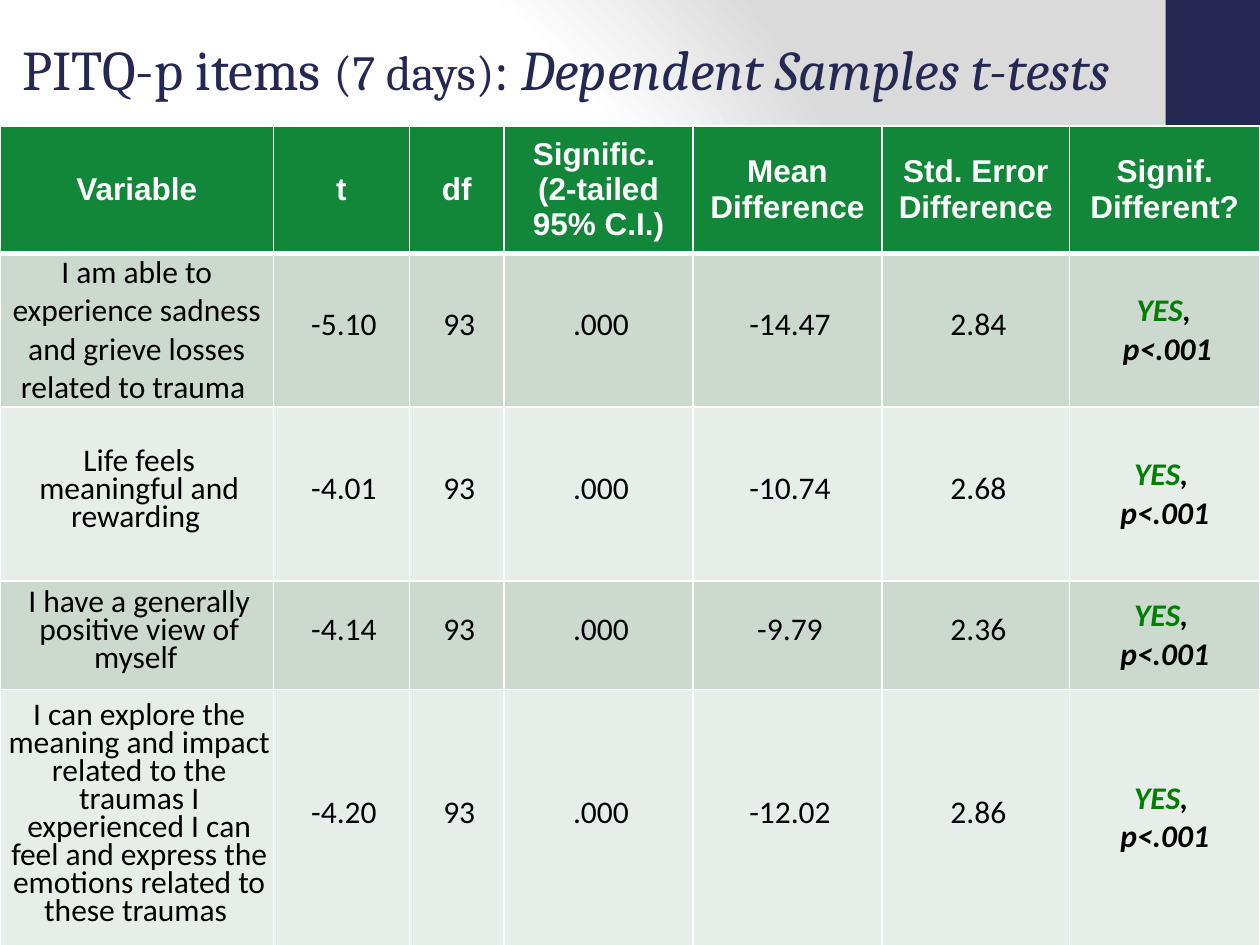
from lxml import etree
from pptx import Presentation
from pptx.dml.color import RGBColor
from pptx.enum.shapes import MSO_SHAPE
from pptx.enum.text import MSO_ANCHOR, MSO_AUTO_SIZE, PP_ALIGN
from pptx.oxml import parse_xml
from pptx.oxml.ns import nsdecls, qn
from pptx.util import Inches, Pt

RECTANGLE = MSO_SHAPE.RECTANGLE
MIDDLE = MSO_ANCHOR.MIDDLE
NO_AUTOFIT = MSO_AUTO_SIZE.NONE
LEFT, CENTER = PP_ALIGN.LEFT, PP_ALIGN.CENTER

NAVY = RGBColor(0x24, 0x28, 0x52)
GREEN = RGBColor(0x12, 0x87, 0x3A)
YES_GREEN = RGBColor(0x00, 0x80, 0x00)
DARK_BAND = RGBColor(0xCC, 0xD9, 0xCE)
LIGHT_BAND = RGBColor(0xE7, 0xED, 0xE8)
WHITE = RGBColor(0xFF, 0xFF, 0xFF)
GRAY = RGBColor(0xDA, 0xDA, 0xDA)
BLACK = RGBColor(0x00, 0x00, 0x00)
INK = RGBColor(0x01, 0x02, 0x05)

COLUMN_WIDTHS = [2.17, 1.08, 0.75, 1.5, 1.5, 1.49, 1.51]
ROW_HEIGHTS = [1.01, 1.22, 1.38, 0.86, 2.04]
HEADERS = ["Variable", "t", "df", "Signific. \n(2-tailed\n95% C.I.)",
           "Mean Difference", "Std. Error Difference", "Signif. Different?"]
ITEMS = [
    ["I am able to experience sadness and grieve losses related to trauma ",
     "-5.10", "93", ".000", "-14.47", "2.84"],
    ["Life feels meaningful and rewarding ",
     "-4.01", "93", ".000", "-10.74", "2.68"],
    ["I have a generally positive view of myself ",
     "-4.14", "93", ".000", "-9.79", "2.36"],
    ["I can explore the meaning and impact related to the traumas I experienced "
     "I can feel and express the emotions related to these traumas ",
     "-4.20", "93", ".000", "-12.02", "2.86"],
]
PADDED_ITEMS = (2, 3)  # rows whose item text keeps the default cell margins


def add_text(para, text, font="Calibri", size=18, color=BLACK, bold=False, italic=False):
    """Add formatted text to a paragraph; each newline becomes a line break."""
    for number, line in enumerate(text.split("\n")):
        if number:
            para.add_line_break()
        span = para.add_run()
        span.text = line
        span.font.name = font
        span.font.size = Pt(size)
        span.font.color.rgb = color
        span.font.bold = bold
        span.font.italic = italic


class SlideBuilder:
    def __init__(self, deck):
        self.slide = deck.slides.add_slide(deck.slide_layouts[5])

    def background(self, stops):
        fill = self.slide.background.fill
        fill.gradient()
        stop_xml = "".join(
            f'<a:gs pos="{place * 1000}"><a:srgbClr val="{color}"/></a:gs>'
            for place, color in stops)
        gradient = parse_xml(
            f'<a:gradFill {nsdecls("a")} rotWithShape="1"><a:gsLst>{stop_xml}</a:gsLst>'
            '<a:path path="circle"><a:fillToRect l="20000" t="50000" r="100000" b="50000"/>'
            '</a:path></a:gradFill>')
        current = next(self.slide.element.iter(qn("a:gradFill")))
        current.getparent().replace(current, gradient)

    def bar(self, left, top, width, height, color):
        box = self.slide.shapes.add_shape(
            RECTANGLE, Inches(left), Inches(top), Inches(width), Inches(height))
        box.shadow.inherit = False
        box.fill.solid()
        box.fill.fore_color.rgb = color
        box.line.fill.background()

    def table(self, left, top, widths, heights):
        frame = self.slide.shapes.add_table(
            len(heights), len(widths), Inches(left), Inches(top),
            Inches(sum(widths)), Inches(sum(heights)))
        table = frame.table
        for column, width in zip(table.columns, widths):
            column.width = Inches(width)
        for row, height in zip(table.rows, heights):
            row.height = Inches(height)
        return table

    def borders(self, cell, widths):
        properties = cell._tc.get_or_add_tcPr()
        for side, width in widths.items():
            line = etree.SubElement(properties, qn(f"a:ln{side}"), w=str(Pt(width)))
            solid = etree.SubElement(line, qn("a:solidFill"))
            etree.SubElement(solid, qn("a:srgbClr"), val=str(WHITE))

    def cell(self, cell, spans, fill, bottom=1, padded=True, indent=0, spacing=None):
        self.borders(cell, {"L": 1, "R": 1, "T": 1, "B": bottom})
        cell.fill.solid()
        cell.fill.fore_color.rgb = fill
        cell.vertical_anchor = MIDDLE
        if not padded:
            cell.margin_left = cell.margin_right = 0
            cell.margin_top = cell.margin_bottom = 0
        para = cell.text_frame.paragraphs[0]
        para.alignment = CENTER
        if indent:
            para._p.get_or_add_pPr().set("marL", str(Inches(indent)))
        if spacing:
            para.line_spacing = Pt(spacing)
        for text, style in spans:
            add_text(para, text, **style)

    def title(self, left, top, width, height, spans):
        box = self.slide.shapes.title
        box.left, box.top = Inches(left), Inches(top)
        box.width, box.height = Inches(width), Inches(height)
        frame = box.text_frame
        frame.word_wrap = True
        frame.auto_size = NO_AUTOFIT
        frame.vertical_anchor = MIDDLE
        para = frame.paragraphs[0]
        para.alignment = LEFT
        for text, style in spans:
            add_text(para, text, font="Cambria", color=NAVY, **style)
        # Bring the title in front of the bar and table
        box.element.getparent().append(box.element)


def main():
    deck = Presentation()
    deck.slide_width, deck.slide_height = Inches(10), Inches(7.5)
    builder = SlideBuilder(deck)

    # Backdrop
    builder.background([(0, WHITE), (75, WHITE), (100, GRAY)])
    builder.bar(9.25, 0, 0.75, 7.5, NAVY)

    # Table header
    table = builder.table(0, 1, COLUMN_WIDTHS, ROW_HEIGHTS)
    header_style = {"font": "Arial", "color": WHITE, "bold": True}
    for column, text in enumerate(HEADERS):
        builder.cell(table.cell(0, column), [(text, header_style)], GREEN, bottom=3)

    # Test results, ending with the verdict column
    emphasis = {"bold": True, "italic": True}
    verdict = [("YES", {"color": YES_GREEN, **emphasis}), (", \np<.001", emphasis)]
    for row, values in enumerate(ITEMS, start=1):
        band = DARK_BAND if row % 2 else LIGHT_BAND
        for column, text in enumerate(values):
            is_item = column == 0
            natural = is_item and row == 1
            builder.cell(
                table.cell(row, column), [(text, {"color": BLACK if is_item else INK})], band,
                padded=is_item and row in PADDED_ITEMS,
                indent=0 if natural else 0.04, spacing=None if natural else 16)
        builder.cell(table.cell(row, len(values)), verdict, band,
                     indent=0.04 if row == 1 else 0)

    # Title
    builder.title(0.08, 0.08, 9.75, 0.92, [
        ("PITQ-p items ", {"size": 32}),
        ("(7 days)", {"size": 28}),
        (": ", {"size": 32}),
        ("Dependent Samples t-tests", {"size": 32, "italic": True}),
    ])

    deck.save("out.pptx")


if __name__ == "__main__":
    main()
